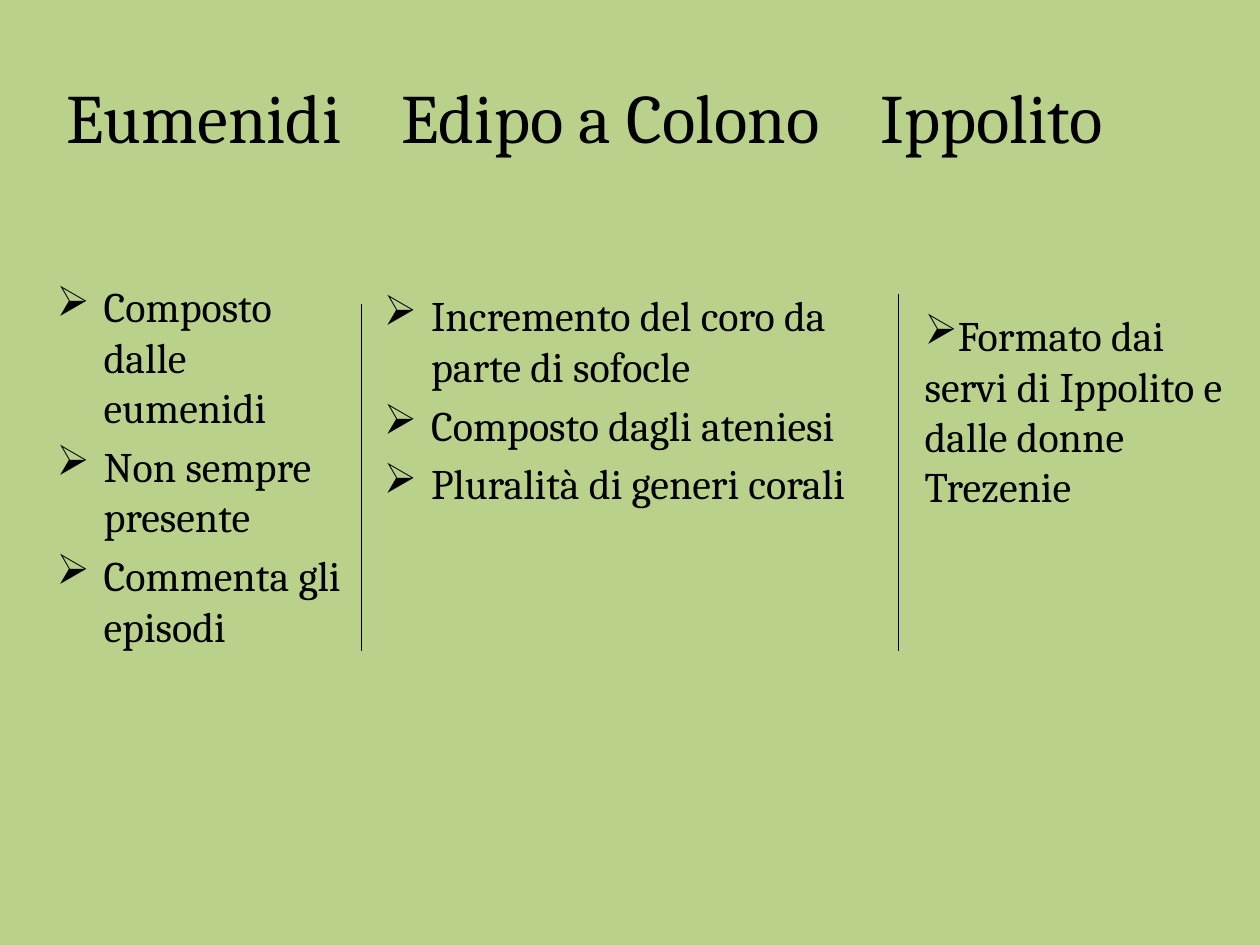
from lxml import etree
from pptx import Presentation
from pptx import util as u
from pptx.dml.color import RGBColor
from pptx.enum import shapes, text
from pptx.oxml.ns import qn

COLORS = {"background": "BAD18C", "ink": "000000"}
INK = RGBColor.from_string(COLORS["ink"])


def add_frame(left, top, width, height):
    """Add a wrapping text box and return its text frame."""
    box = slide.shapes.add_textbox(u.Cm(left), u.Cm(top), u.Cm(width), u.Cm(height))
    box.text_frame.word_wrap = True
    return box.text_frame


def add_text(paragraph, words, size):
    run = paragraph.add_run()
    run.text = words
    run.font.name = "Cambria"
    run.font.size = u.Pt(size)
    run.font.color.rgb = INK


presentation = Presentation()
presentation.slide_width = u.Cm(25.4)
presentation.slide_height = u.Cm(19.05)
slide = presentation.slides.add_slide(presentation.slide_layouts[6])
slide.background.fill.solid()
slide.background.fill.fore_color.rgb = RGBColor.from_string(COLORS["background"])

# Three headings on one line, set apart by tab stops
title = add_frame(1.09, 0.74, 24, 3.18)
title.vertical_anchor = text.MSO_ANCHOR.MIDDLE
heading = title.paragraphs[0]
tab_list = etree.SubElement(heading._p.get_or_add_pPr(), qn("a:tabLst"))
for position in (6.76, 16.41):
    etree.SubElement(tab_list, qn("a:tab"), pos=str(u.Cm(position)), algn="l")
add_text(heading, "Eumenidi\tEdipo a Colono\tIppolito", 39.6)

# Left, top, width, height, hanging indent, points
columns = [
    (0.89, 5.54, 6.43, 12.57, 0.95,
     ["Composto dalle eumenidi", "Non sempre presente", "Commenta gli episodi"]),
    (7.49, 5.72, 10.59, 12.57, 0.95,
     ["Incremento del coro da parte di sofocle", "Composto dagli ateniesi",
      "Pluralità di generi corali"]),
    (18.39, 6.12, 7.01, 4.37, 0,
     ["Formato dai servi di Ippolito e dalle donne Trezenie"]),
]
for left, top, width, height, indent, points in columns:
    frame = add_frame(left, top, width, height)
    for index, point in enumerate(points):
        paragraph = frame.add_paragraph() if index else frame.paragraphs[0]
        properties = paragraph._p.get_or_add_pPr()
        properties.set("marL", str(u.Cm(indent)))
        properties.set("indent", str(-u.Cm(indent)))
        etree.SubElement(properties, qn("a:buChar"), char="➢")
        if index:
            paragraph.space_before = u.Pt(4.8)
        add_text(paragraph, point, 24)

# Dividers between the columns
for x, top in ((7.29, 6.12), (18.11, 5.92)):
    divider = slide.shapes.add_connector(
        shapes.MSO_CONNECTOR.STRAIGHT, u.Cm(x), u.Cm(top), u.Cm(x), u.Cm(13.13))
    divider.line.color.rgb = INK
    divider.line.width = u.Pt(0.75)
    etree.SubElement(divider._element.spPr, qn("a:effectLst"))

presentation.save("out.pptx")
